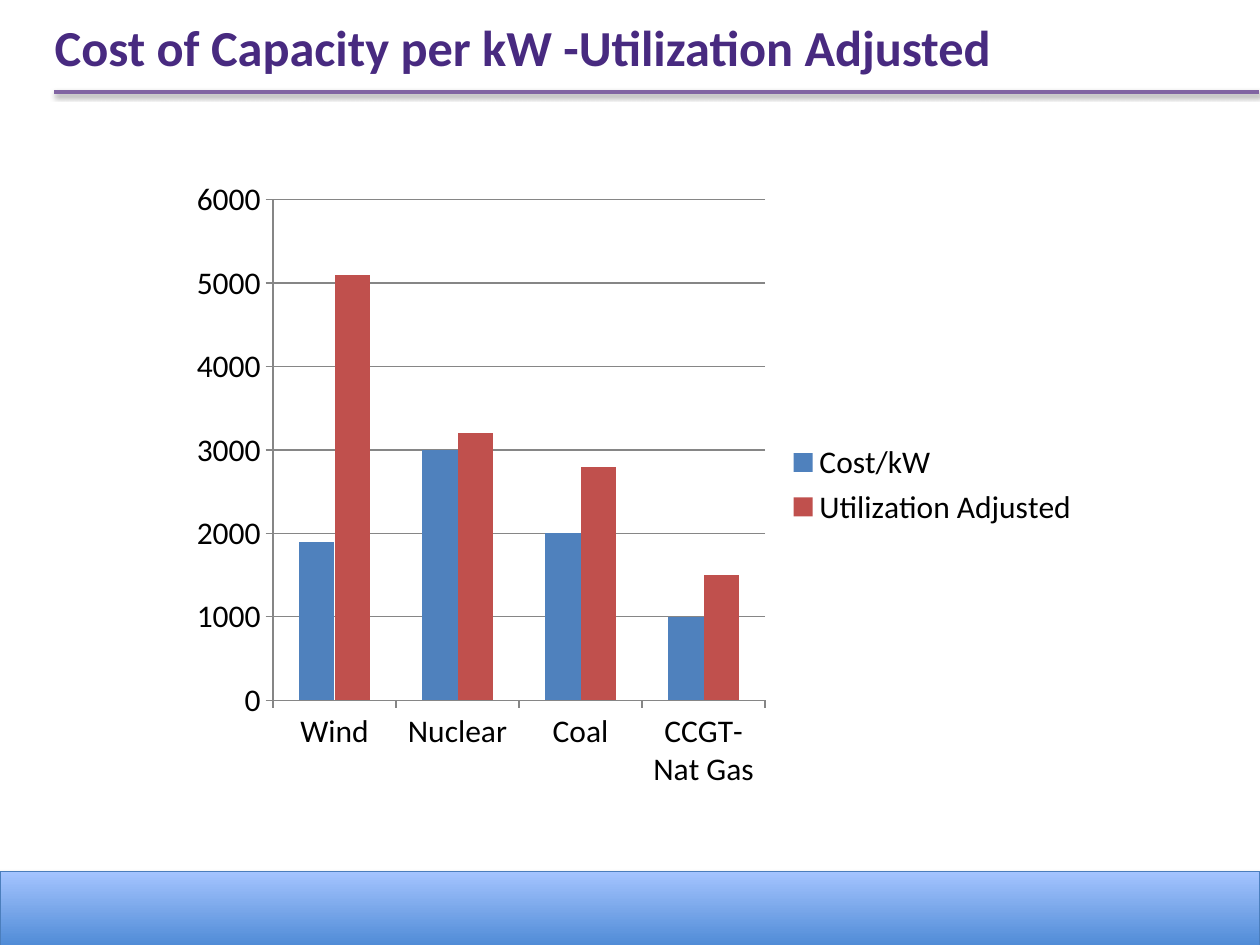
from lxml import etree
from pptx import Presentation
from pptx.chart.data import CategoryChartData
from pptx.dml.color import RGBColor
from pptx.enum import chart as ch, shapes, text
from pptx.oxml import ns
from pptx.util import Pt

COLORS = {
    "title": "482A80", "rule": "8064A2", "text": "000000", "axis": "868686",
    "cost": "4F81BD", "adjusted": "C0504D",
    "band_bottom": "3F80CE", "band_top": "A4C4FF", "band_line": "4B7EBC",
}
FONT = "Calibri"


def rgb(name):
    return RGBColor.from_string(COLORS[name])


def add_shadow(shape, dist, opacity):
    """Soft black shadow straight below the shape."""
    effects = etree.SubElement(shape._element.spPr, ns.qn("a:effectLst"))
    shadow = etree.SubElement(effects, ns.qn("a:outerShdw"), blurRad=str(Pt(3.1)),
                              dist=str(Pt(dist)), dir="5400000", rotWithShape="0")
    color = etree.SubElement(shadow, ns.qn("a:srgbClr"), val=COLORS["text"])
    etree.SubElement(color, ns.qn("a:alpha"), val=str(opacity * 1000))


prs = Presentation()
prs.slide_width, prs.slide_height = Pt(720), Pt(540)
s = prs.slides.add_slide(prs.slide_layouts[5])

# Rule under the title
rule = s.shapes.add_connector(shapes.MSO_CONNECTOR.STRAIGHT,
                              Pt(31), Pt(52.5), Pt(719.5), Pt(52.5))
rule.line.color.rgb = rgb("rule")
rule.line.width = Pt(2)
add_shadow(rule, 1.6, 38)

# Title
title = s.shapes.title
title.left, title.top, title.width, title.height = Pt(24), Pt(14), Pt(648), Pt(24.5)
tf = title.text_frame
tf.text = "Cost of Capacity per kW -Utilization Adjusted"
tf.auto_size = text.MSO_AUTO_SIZE.NONE
tf.vertical_anchor = text.MSO_ANCHOR.MIDDLE
p = tf.paragraphs[0]
p.alignment = text.PP_ALIGN.LEFT
r = p.runs[0]
r.font.name, r.font.size, r.font.bold = FONT, Pt(28.8), True
r.font.color.rgb = rgb("title")

# Column chart
data = CategoryChartData()
data.categories = ["Wind", "Nuclear", "Coal", "CCGT- Nat Gas"]
data.add_series("Cost/kW ", [1900, 3000, 2000, 1000])
data.add_series("Utilization Adjusted", [5100, 3200, 2800, 1500])
chart = s.shapes.add_chart(ch.XL_CHART_TYPE.COLUMN_CLUSTERED, Pt(102), Pt(96),
                           Pt(522), Pt(362), data).chart
chart.font.name, chart.font.size = FONT, Pt(18)
chart.font.color.rgb = rgb("text")
chart.has_title = False
chart.has_legend = True
chart.legend.position = ch.XL_LEGEND_POSITION.RIGHT
chart.legend.include_in_layout = False

plot = chart.plots[0]
plot.gap_width, plot.overlap = 150, 0
plot.vary_by_categories = False
for series, color in zip(plot.series, ("cost", "adjusted")):
    series.format.fill.solid()
    series.format.fill.fore_color.rgb = rgb(color)

values = chart.value_axis
values.minimum_scale, values.maximum_scale, values.major_unit = 0, 6000, 1000
values.has_major_gridlines = True
for axis in (chart.category_axis, values):
    axis.major_tick_mark = ch.XL_TICK_MARK.OUTSIDE
    axis.minor_tick_mark = ch.XL_TICK_MARK.NONE
for part in (chart.category_axis, values, values.major_gridlines):
    part.format.line.color.rgb = rgb("axis")
    part.format.line.width = Pt(0.75)

# Footer band
band = s.shapes.add_shape(shapes.MSO_SHAPE.RECTANGLE, 0, Pt(498), Pt(720), Pt(51))
band.fill.gradient()
band.fill.gradient_angle = 90
for stop, color in zip(band.fill.gradient_stops, ("band_bottom", "band_top")):
    stop.color.rgb = rgb(color)
band.line.color.rgb = rgb("band_line")
band.line.width = Pt(0.75)
add_shadow(band, 1.8, 35)

prs.save("out.pptx")
